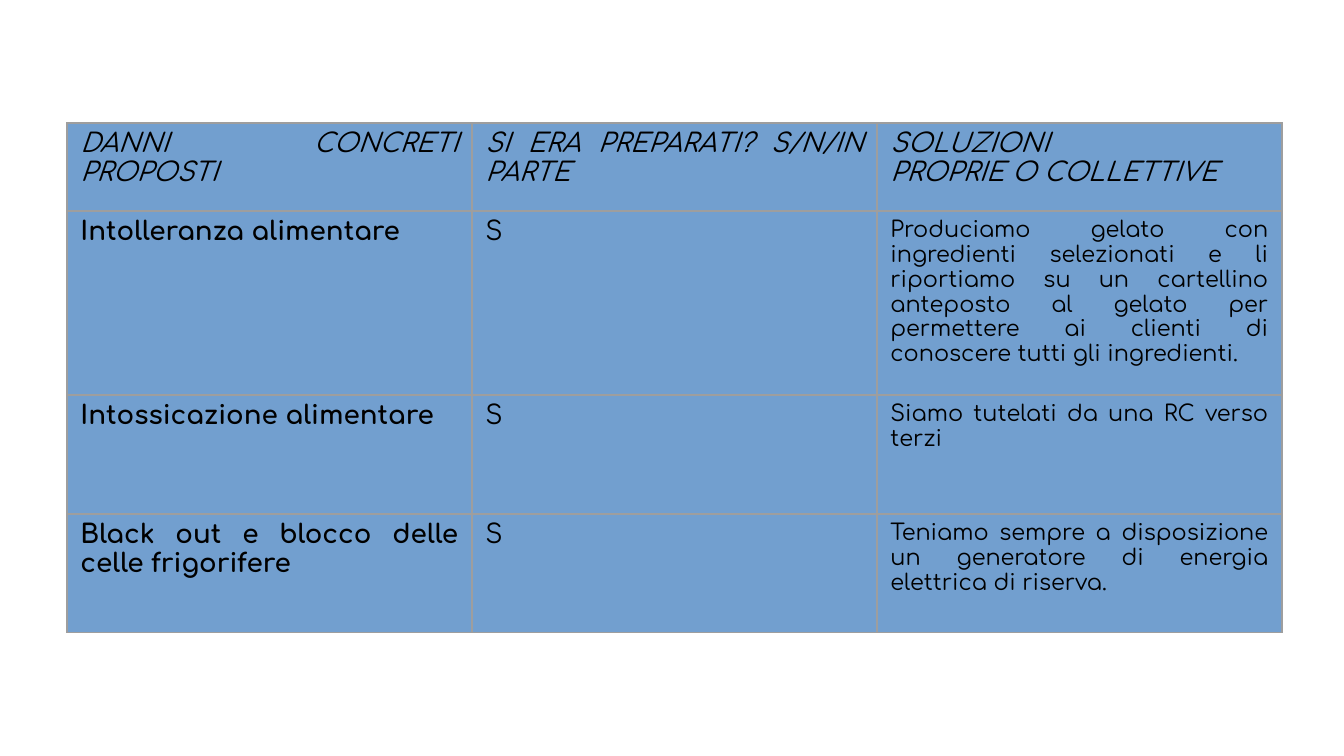
import pptx
import pptx.util
import pptx.dml.color
import pptx.enum.text
import pptx.oxml
import pptx.oxml.ns
import lxml.etree

SCALE = 914400 / 134.4
FONT = "Comfortaa"
HEAD = {"size": 14, "italic": True, "bold": False}
RISK = {"size": 14, "bold": True}
READY = {"size": 14, "bold": False}
REMEDY = {"size": 12, "bold": False}

ROWS = [
    ("DANNI CONCRETI PROPOSTI", "SI ERA PREPARATI? S/N/IN PARTE",
     "SOLUZIONI\vPROPRIE O COLLETTIVE"),
    ("Intolleranza alimentare", "S",
     "Produciamo gelato con ingredienti selezionati e li riportiamo su un "
     "cartellino anteposto al gelato per permettere ai clienti di conoscere "
     "tutti gli ingredienti."),
    ("Intossicazione alimentare", "S", "Siamo tutelati da una RC verso terzi"),
    ("Black out e blocco delle celle frigorifere", "S",
     "Teniamo sempre a disposizione un generatore di energia elettrica di riserva."),
]


def px(num):
    return pptx.util.Emu(round(num * SCALE))


def color(code):
    return pptx.dml.color.RGBColor.from_string(code)


class Deck:
    fill = "729FCF"
    ink = "000000"
    edge = "9E9E9E"
    width = 0.75

    def __init__(self, wide, high):
        self.file = pptx.Presentation()
        self.file.slide_width = px(wide)
        self.file.slide_height = px(high)
        self.slide = self.file.slides.add_slide(self.file.slide_layouts[6])

    def border(self, cell):
        props = cell._tc.get_or_add_tcPr()
        for side in ("lnL", "lnR", "lnT", "lnB"):
            line = lxml.etree.SubElement(
                props, pptx.oxml.ns.qn("a:" + side),
                w=str(pptx.util.Pt(self.width)))
            paint = lxml.etree.SubElement(line, pptx.oxml.ns.qn("a:solidFill"))
            lxml.etree.SubElement(
                paint, pptx.oxml.ns.qn("a:srgbClr"), val=self.edge)

    def cell(self, cell, text, style):
        self.border(cell)
        cell.fill.solid()
        cell.fill.fore_color.rgb = color(self.fill)
        cell.text = text
        para = cell.text_frame.paragraphs[0]
        para.alignment = pptx.enum.text.PP_ALIGN.JUSTIFY
        for run in para.runs:
            look = {**style, "name": FONT, "size": pptx.util.Pt(style["size"])}
            for key, val in look.items():
                setattr(run.font, key, val)
            run.font.color.rgb = color(self.ink)

    def table(self, left, top, cols, highs, rows, styles):
        frame = self.slide.shapes.add_table(
            len(rows), len(cols), px(left), px(top), px(sum(cols)), px(sum(highs)))
        grid = frame.table
        for key, val in {"first_row": False, "horz_banding": False}.items():
            setattr(grid, key, val)
        for col, wide in zip(grid.columns, cols):
            col.width = px(wide)
        for row, high, texts, looks in zip(grid.rows, highs, rows, styles):
            row.height = px(high)
            for cell, text, look in zip(row.cells, texts, looks):
                self.cell(cell, text, look)


def main():
    deck = Deck(1344, 756)
    styles = [[HEAD] * 3] + [[RISK, READY, REMEDY]] * 3
    deck.table(67, 123, [405] * 3, [88, 184, 119, 119], ROWS, styles)
    deck.file.save("out.pptx")


if __name__ == "__main__":
    main()
